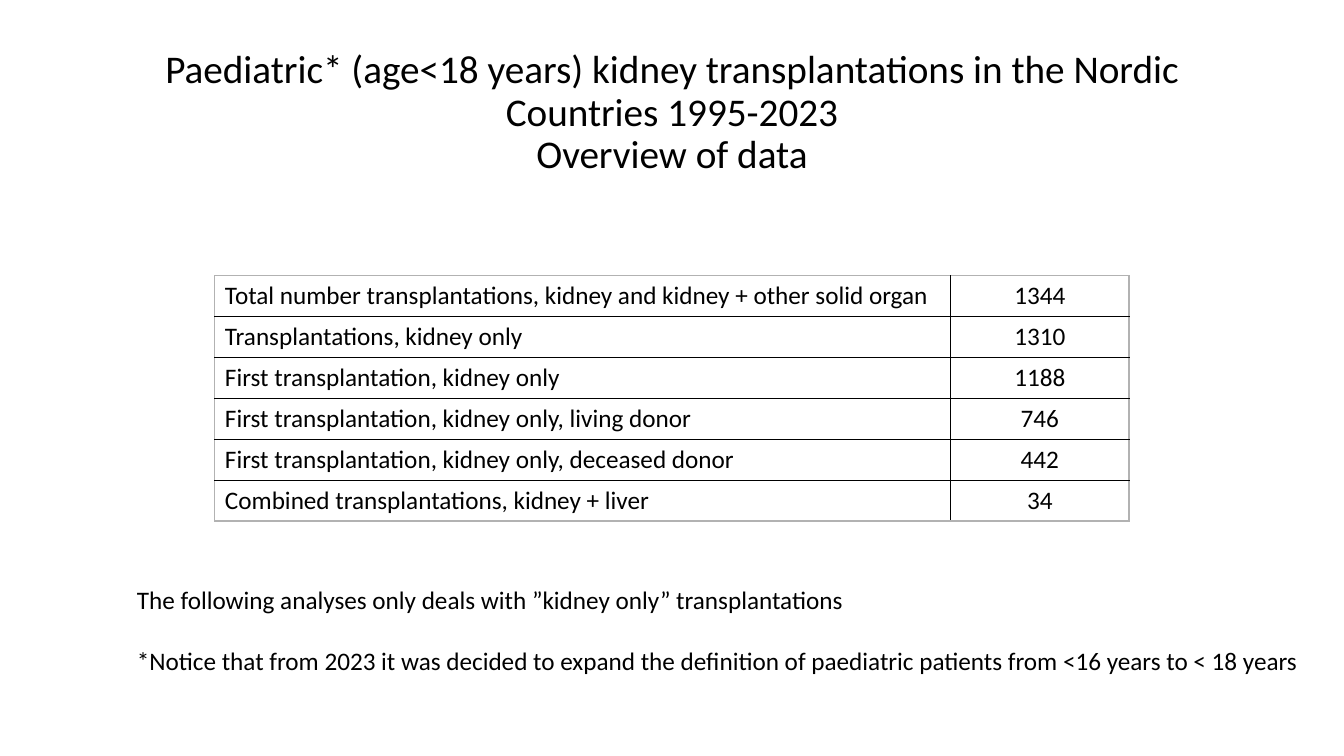
from dataclasses import dataclass

from lxml import etree
from pptx import Presentation
from pptx.dml.color import RGBColor
from pptx.enum.text import MSO_ANCHOR, MSO_AUTO_SIZE, PP_ALIGN
from pptx.oxml.ns import qn
from pptx.util import Pt

LEFT = PP_ALIGN.LEFT
CENTER = PP_ALIGN.CENTER
MIDDLE = MSO_ANCHOR.MIDDLE
GROW = MSO_AUTO_SIZE.SHAPE_TO_FIT_TEXT


@dataclass(frozen=True)
class Theme:
    font: str = "Calibri"
    text: str = "000000"
    inner_border: str = "000000"
    outer_border: str = "B2B2B2"
    border_width: float = 1
    title_size: float = 28
    body_size: float = 18


THEME = Theme()

TITLE_LINES = [
    "Paediatric* (age<18 years) kidney transplantations in the Nordic Countries 1995-2023",
    "Overview of data",
]
TRANSPLANTATIONS = [
    ("Total number transplantations, kidney and kidney + other solid organ", "1344"),
    ("Transplantations, kidney only", "1310"),
    ("First transplantation, kidney only", "1188"),
    ("First transplantation, kidney only, living donor", "746"),
    ("First transplantation, kidney only, deceased donor", "442"),
    ("Combined transplantations, kidney + liver", "34"),
]
NOTES = [
    "The following analyses only deals with ”kidney only” transplantations",
    "*Notice that from 2023 it was decided to expand the definition of paediatric "
    "patients from <16 years to < 18 years",
]


def add_run(paragraph, text, size):
    run = paragraph.add_run()
    run.text = text
    run.font.name = THEME.font
    run.font.size = Pt(size)
    run.font.color.rgb = RGBColor.from_string(THEME.text)


def add_border(cell, side, color):
    line = etree.SubElement(
        cell._tc.get_or_add_tcPr(), qn(f"a:ln{side}"), w=str(Pt(THEME.border_width))
    )
    fill = etree.SubElement(line, qn("a:solidFill"))
    etree.SubElement(fill, qn("a:srgbClr"), val=color)


def add_title(slide, left, top, width, height):
    box = slide.shapes.add_textbox(Pt(left), Pt(top), Pt(width), Pt(height))
    frame = box.text_frame
    frame.word_wrap = True
    frame.vertical_anchor = MIDDLE
    paragraph = frame.paragraphs[0]
    paragraph.alignment = CENTER
    paragraph.line_spacing = 0.9
    for index, line in enumerate(TITLE_LINES):
        if index:
            paragraph.add_line_break()
        add_run(paragraph, line, THEME.title_size)


def add_overview_table(slide, left, top, width, height, count_width):
    row_count = len(TRANSPLANTATIONS)
    table = slide.shapes.add_table(
        row_count, 2, Pt(left), Pt(top), Pt(width), Pt(height)
    ).table
    table.first_row = False
    table.horz_banding = False
    table.columns[0].width = Pt(width - count_width)
    table.columns[1].width = Pt(count_width)
    for row_index, values in enumerate(TRANSPLANTATIONS):
        table.rows[row_index].height = Pt(height / row_count)
        for column_index, (text, alignment) in enumerate(zip(values, (LEFT, CENTER))):
            cell = table.cell(row_index, column_index)
            outer_sides = {
                "L": column_index == 0,
                "R": column_index == 1,
                "T": row_index == 0,
                "B": row_index == row_count - 1,
            }
            for side, is_outer in outer_sides.items():
                add_border(cell, side, THEME.outer_border if is_outer else THEME.inner_border)
            cell.fill.background()
            paragraph = cell.text_frame.paragraphs[0]
            paragraph.alignment = alignment
            add_run(paragraph, text, THEME.body_size)


def add_notes_box(slide, left, top, width, height):
    box = slide.shapes.add_textbox(Pt(left), Pt(top), Pt(width), Pt(height))
    frame = box.text_frame
    frame.word_wrap = False
    frame.auto_size = GROW
    for index, text in enumerate(NOTES):
        paragraph = frame.add_paragraph() if index else frame.paragraphs[0]
        if index:
            paragraph.space_before = Pt(22)
        add_run(paragraph, text, THEME.body_size)


def main():
    presentation = Presentation()
    presentation.slide_width = Pt(960)
    presentation.slide_height = Pt(540)
    slide = presentation.slides.add_slide(presentation.slide_layouts[6])
    add_title(slide, 66, 28.75, 828, 104.4)
    add_overview_table(slide, 153.5, 197, 653, 175.2, 127.5)
    add_notes_box(slide, 90.7, 414, 854.6, 72.7)
    presentation.save("out.pptx")


if __name__ == "__main__":
    main()
